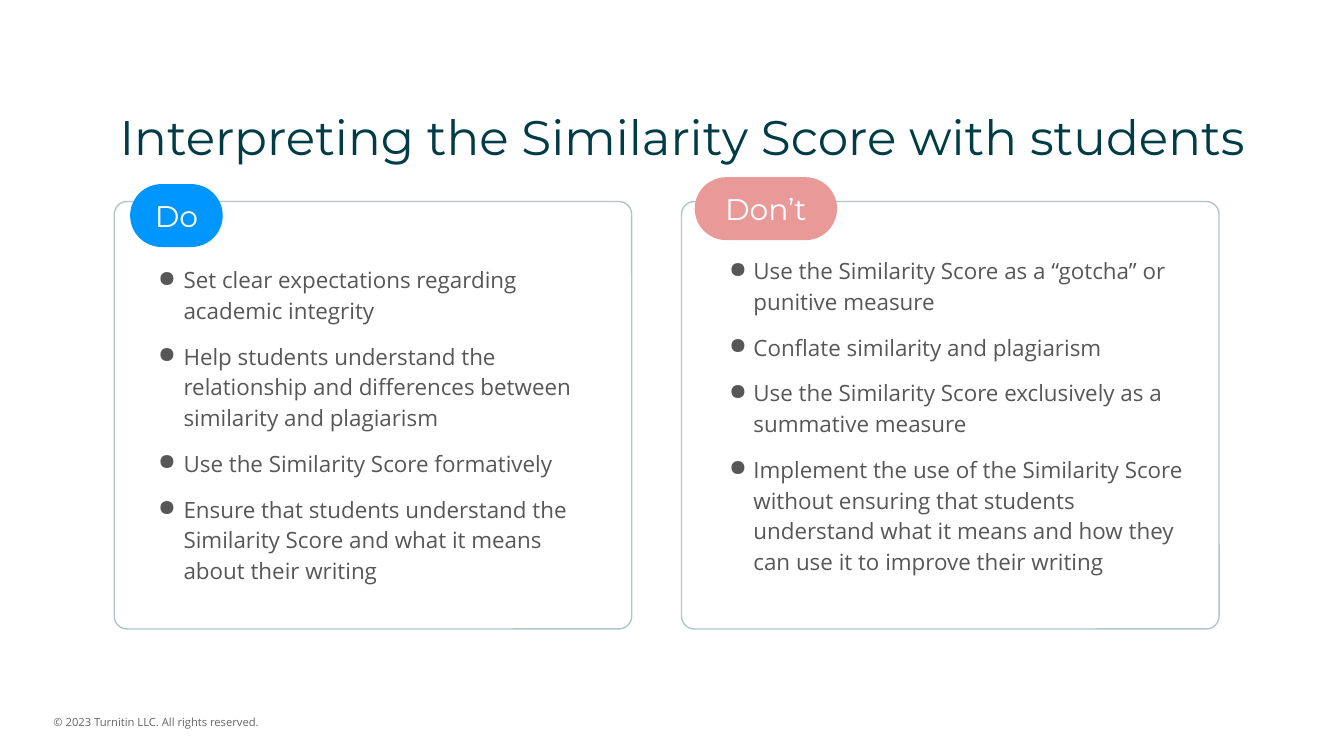
from pptx import Presentation
from pptx.dml.color import RGBColor as RGB
from pptx.enum.shapes import MSO_SHAPE as Kind
from pptx.enum.text import MSO_ANCHOR as Anchor, PP_ALIGN as Align
from pptx.oxml.ns import qn
from pptx.util import Cm, Pt
from lxml.etree import SubElement as Sub

INK = "575757"
DO = [
    "Set clear expectations regarding academic integrity",
    "Help students understand the relationship and differences between similarity and plagiarism",
    "Use the Similarity Score formatively",
    "Ensure that students understand the Similarity Score and what it means about their writing",
]
DONT = [
    "Use the Similarity Score as a “gotcha” or punitive measure",
    "Conflate similarity and plagiarism",
    "Use the Similarity Score exclusively as a summative measure",
    "Implement the use of the Similarity Score without ensuring that students "
    "understand what it means and how they can use it to improve their writing",
]


def color(code):
    return RGB.from_string(code)


def style(para, size, face, code):
    para.font.size = Pt(size)
    para.font.name = face
    para.font.color.rgb = color(code)


def pad(frame, side, top):
    frame.margin_left = frame.margin_right = Cm(side)
    frame.margin_top = frame.margin_bottom = Cm(top)


def text(slide, box, top=0.25):
    frame = slide.shapes.add_textbox(*map(Cm, box)).text_frame
    frame.word_wrap = True
    pad(frame, 0.25, top)
    return frame


def round_box(slide, box, bend):
    shape = slide.shapes.add_shape(Kind.ROUNDED_RECTANGLE, *map(Cm, box))
    shape.shadow.inherit = False
    shape.adjustments[0] = bend
    return shape


def title(slide, box):
    para = text(slide, box).paragraphs[0]
    para.text = "Interpreting the Similarity Score with students"
    para.line_spacing = 1.15
    style(para, 26, "Montserrat", "003C46")


def footer(slide, box):
    frame = text(slide, box, 0.13)
    frame.vertical_anchor = Anchor.BOTTOM
    para = frame.paragraphs[0]
    para.text = "© 2023 Turnitin LLC. All rights reserved."
    style(para, 6, "Open Sans", "666666")


def badge(slide, box, label, fill):
    pill = round_box(slide, box, 0.5)
    pill.fill.solid()
    pill.fill.fore_color.rgb = color(fill)
    pill.line.fill.background()
    frame = pill.text_frame
    frame.word_wrap = False
    frame.vertical_anchor = Anchor.MIDDLE
    pad(frame, 0, 0)
    para = frame.paragraphs[0]
    para.text = label
    para.alignment = Align.CENTER
    style(para, 16, "Montserrat", "FFFFFF")


def bullet(para, hang):
    props = para._p.get_or_add_pPr()
    props.set("marL", str(Cm(0.76)))
    props.set("indent", str(-Cm(hang)))
    tint = Sub(props, qn("a:buClr"))
    Sub(tint, qn("a:srgbClr"), val=INK)
    Sub(props, qn("a:buChar"), char="●")


def points(slide, box, items, hang):
    frame = text(slide, box)
    for i, item in enumerate(items):
        para = frame.add_paragraph() if i else frame.paragraphs[0]
        para.text = item
        bullet(para, hang)
        para.line_spacing = Pt(16.5)
        if i:
            para.space_before = Pt(8)
        style(para, 12, "Open Sans", INK)


def panel(slide, box, label, fill, tag, items, inset, hang):
    x, y, w, h = box
    frame = round_box(slide, box, 0.03)
    frame.fill.background()
    frame.line.color.rgb = color("B2C4C7")
    frame.line.width = Pt(0.75)
    dx, dy = inset
    points(slide, (x + dx, y + dy, w - 2 * dx + 0.05, h - dy - 0.4), items, hang)
    dx, dy, width = tag
    badge(slide, (x + dx, y + dy, width, 1.19), label, fill)


def main():
    deck = Presentation()
    deck.slide_width, deck.slide_height = Cm(25.4), Cm(14.29)
    slide = deck.slides.add_slide(deck.slide_layouts[6])
    footer(slide, (0.76, 13.26, 5.56, 0.64))
    title(slide, (2.01, 1.6, 23.67, 1.6))
    panel(slide, (2.16, 3.81, 9.78, 8.08), "Do", "0096FF",
          (0.3, -0.33, 1.75), DO, (0.3, 0.9), 0.48)
    panel(slide, (12.88, 3.81, 10.16, 8.08), "Don’t", "EA9999",
          (0.25, -0.46, 2.69), DONT, (0.35, 0.73), 0.46)
    deck.save("out.pptx")


if __name__ == "__main__":
    main()
